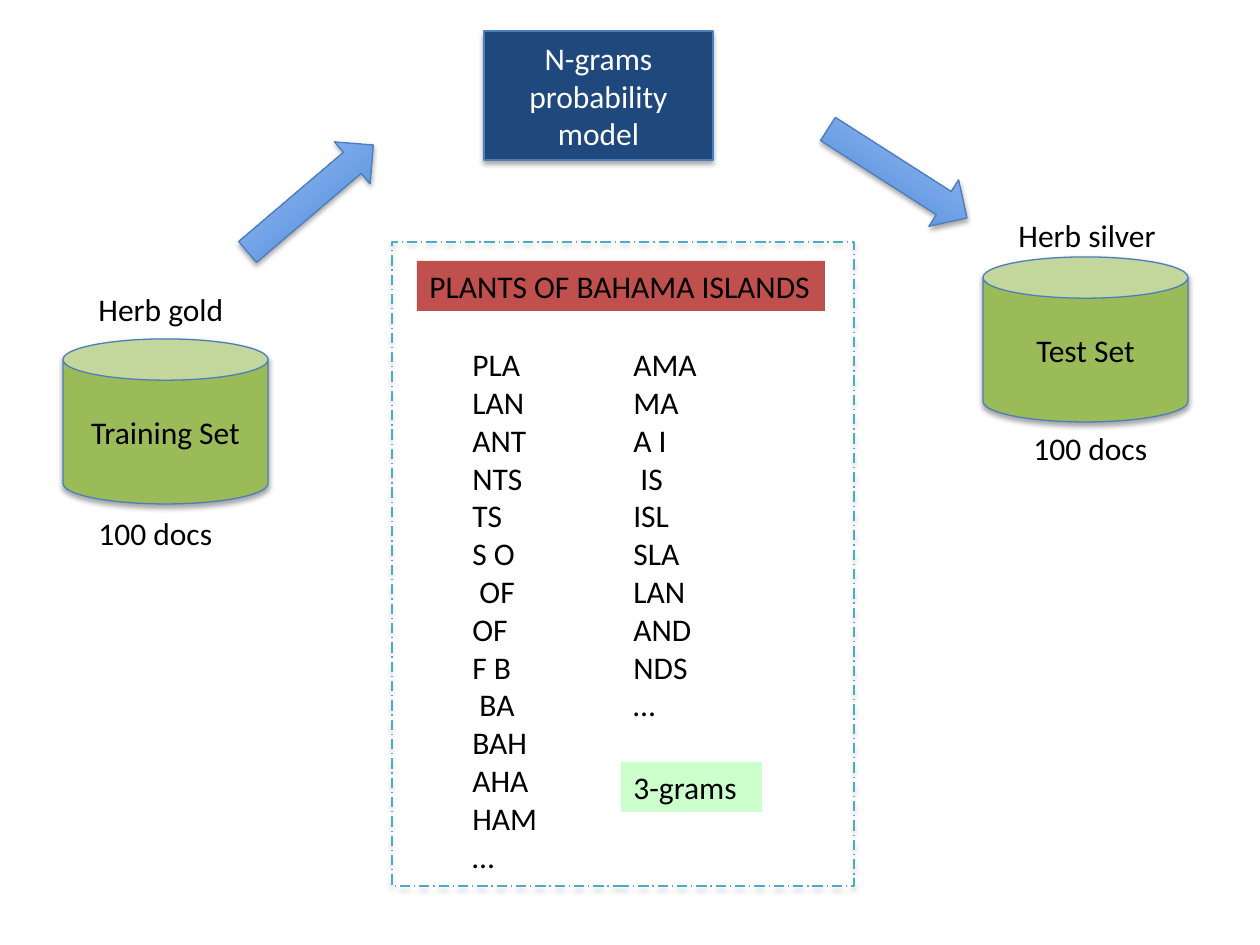
from lxml import etree
from pptx import Presentation
from pptx import util as u
from pptx.dml.color import RGBColor
from pptx.enum import dml, shapes, text
from pptx.oxml.ns import qn

PX = 914400 / 126  # EMU in one px
SHAPE = shapes.MSO_SHAPE
COLORS = {
    "text": "000000", "light_text": "FFFFFF", "model": "1F497D",
    "outline": "4B7EBC", "set": "9BBB59", "title": "C0504D",
    "tag": "CCFFCC", "frame": "4BACC6", "shadow": "000000",
    "arrow_dark": "3F80CE", "arrow_light": "A4C4FF",
}

# Content: boxes are left, top, width, height in px
DATA_SETS = [("Training Set", (63, 339, 205, 165)),
             ("Test Set", (983, 257, 205, 165))]
LABELS = [
    (["Herb gold"], (86, 284, 183, 50), None),
    (["100 docs"], (86, 508, 168, 50), None),
    (["Herb silver"], (1006, 210, 183, 50), None),
    (["100 docs"], (1021, 423, 168, 50), None),
    (["PLANTS OF BAHAMA ISLANDS"], (417, 261, 408, 50), "title"),
    (["PLA", "LAN", "ANT", "NTS", "TS", "S O", " OF", "OF", "F B", " BA",
      "BAH", "AHA", "HAM", "…"], (460, 339, 137, 547), None),
    (["AMA", "MA", "A I", " IS", "ISL", "SLA", "LAN", "AND", "NDS", "…"],
     (621, 339, 137, 394), None),
    (["3-grams"], (621, 762, 141, 50), "tag"),
]
MODEL = ("N-grams probability model", (484, 31, 229, 129))
ARROWS = [((228, 171, 165, 55), 319.6), ((815, 146, 165, 55), 32.6)]
FRAME = (392, 242, 462, 644)


def color(name):
    return RGBColor.from_string(COLORS[name])


def emu(box):
    return [round(v * PX) for v in box]


def paint(shape, name):
    shape.fill.solid()
    shape.fill.fore_color.rgb = color(name)


def write(shape, lines, ink="text", align=text.PP_ALIGN.LEFT):
    frame = shape.text_frame
    frame.word_wrap = True
    frame.text = "\n".join(lines)
    for paragraph in frame.paragraphs:
        paragraph.alignment = align
        for run in paragraph.runs:
            run.font.size = u.Pt(18)
            run.font.name = "Calibri"
            run.font.color.rgb = color(ink)


def add_outlined(kind, box, line="outline"):
    """Add a shape with a thin outline and a soft shadow below it."""
    shape = slide.shapes.add_shape(kind, *emu(box))
    shape.line.color.rgb = color(line)
    shape.line.width = u.Pt(0.75)
    shape.shadow.inherit = False
    effects = shape._element.spPr.find(qn("a:effectLst"))
    shadow = etree.SubElement(
        effects, qn("a:outerShdw"), blurRad=str(u.Pt(3.1)),
        dist=str(u.Pt(1.8)), dir="5400000", rotWithShape="0")
    tint = etree.SubElement(shadow, qn("a:srgbClr"), val=COLORS["shadow"])
    etree.SubElement(tint, qn("a:alpha"), val="35000")
    return shape


def add_block(kind, caption, box, fill, ink):
    block = add_outlined(kind, box)
    paint(block, fill)
    write(block, [caption], ink, text.PP_ALIGN.CENTER)
    block.text_frame.vertical_anchor = text.MSO_ANCHOR.MIDDLE


prs = Presentation()
prs.slide_width, prs.slide_height = emu((1260, 945))
slide = prs.slides.add_slide(prs.slide_layouts[6])

# Data sets and model
for caption, box in DATA_SETS:
    add_block(SHAPE.CAN, caption, box, "set", "text")
add_block(SHAPE.FLOWCHART_PROCESS, *MODEL, "model", "light_text")

# Labels and 3-gram columns
for lines, box, fill in LABELS:
    label = slide.shapes.add_textbox(*emu(box))
    if fill:
        paint(label, fill)
    write(label, lines)
    label.text_frame.auto_size = text.MSO_AUTO_SIZE.SHAPE_TO_FIT_TEXT

# Arrows to and from the model
for box, angle in ARROWS:
    arrow = add_outlined(SHAPE.RIGHT_ARROW, box)
    arrow.rotation = angle
    arrow.fill.gradient()
    arrow.fill.gradient_angle = 90
    for stop, name, position in zip(arrow.fill.gradient_stops,
                                    ("arrow_dark", "arrow_light"), (0, 1)):
        stop.color.rgb = color(name)
        stop.position = position

# Dashed frame around the example
example = add_outlined(SHAPE.RECTANGLE, FRAME, "frame")
example.fill.background()
example.line.dash_style = dml.MSO_LINE.LONG_DASH_DOT

prs.save("out.pptx")
